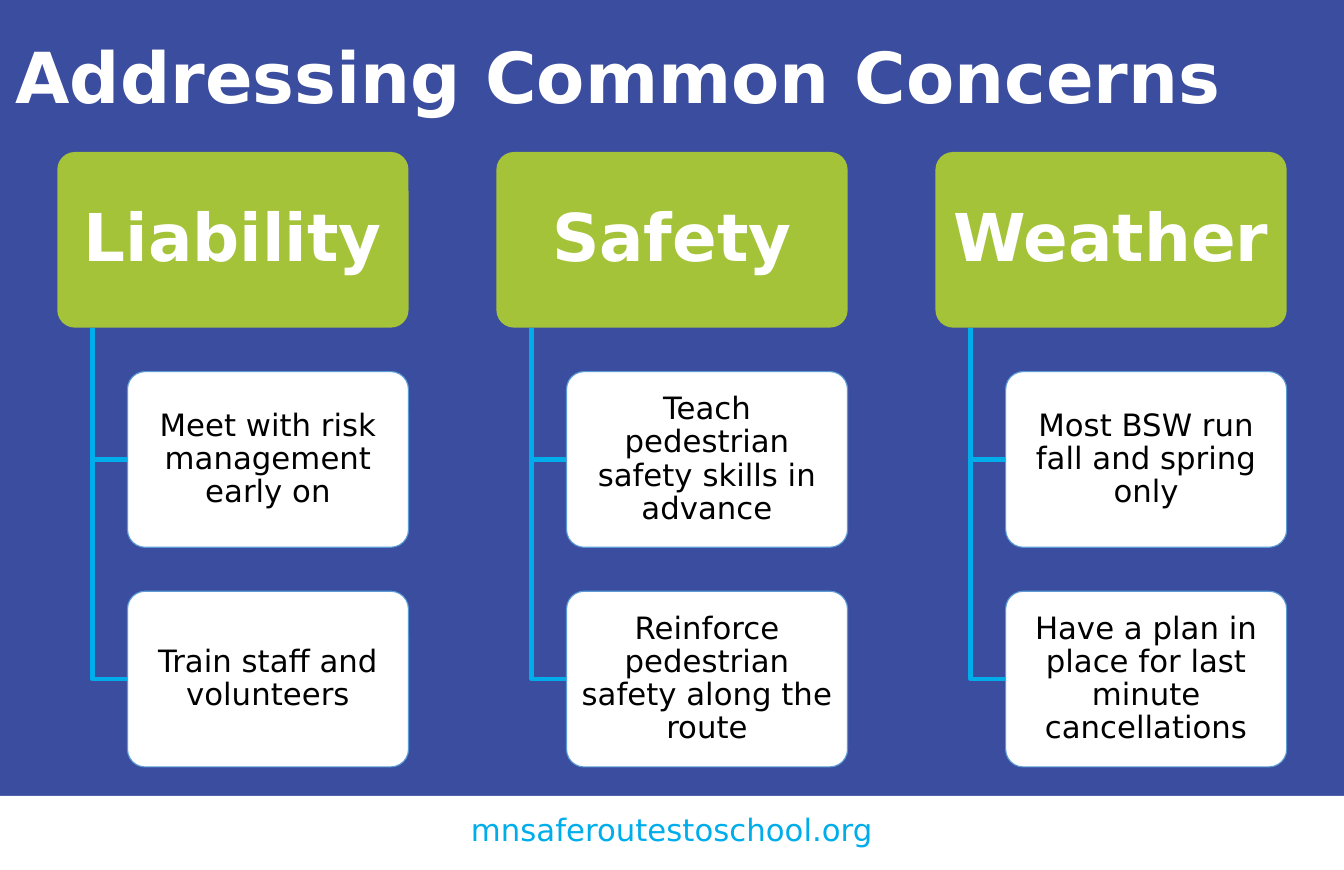
from pptx import Presentation
from pptx.dml.color import RGBColor
from pptx.enum.shapes import MSO_SHAPE
from pptx.enum.text import MSO_ANCHOR, MSO_AUTO_SIZE, PP_ALIGN
from pptx.util import Cm, Pt

RECT, ROUNDED = MSO_SHAPE.RECTANGLE, MSO_SHAPE.ROUNDED_RECTANGLE
LEFT, CENTER = PP_ALIGN.LEFT, PP_ALIGN.CENTER
MIDDLE, NO_FIT = MSO_ANCHOR.MIDDLE, MSO_AUTO_SIZE.NONE

FONT = "DejaVu Sans"
BLUE, GREEN, CYAN, EDGE = "3B4D9E", "A4C339", "00ADEB", "5B9BD5"
WHITE, BLACK = "FFFFFF", "000000"
WIDTH, HEIGHT = 21.59, 13.97

CONCERNS = [
    ("Liability", ["Meet with risk management early on", "Train staff and volunteers"]),
    ("Safety", ["Teach pedestrian safety skills in advance",
                "Reinforce pedestrian safety along the route"]),
    ("Weather", ["Most BSW run fall and spring only",
                 "Have a plan in place for last minute cancellations"]),
]


def paint(color_format, color):
    color_format.rgb = RGBColor.from_string(color)


def fill(target, color):
    target.fill.solid()
    paint(target.fill.fore_color, color)


def outline(sp, color, width):
    paint(sp.line.color, color)
    sp.line.width = Pt(width)


def write(sp, text, size, color, bold=False, align=CENTER, spacing=0.9, inset=0.25):
    tf = sp.text_frame
    tf.word_wrap = True
    tf.auto_size = NO_FIT
    tf.vertical_anchor = MIDDLE
    tf.margin_left = tf.margin_right = Cm(inset)
    tf.margin_top = tf.margin_bottom = Cm(0.13)
    p = tf.paragraphs[0]
    p.alignment = align
    p.line_spacing = spacing
    r = p.add_run()
    r.text = text
    r.font.name = FONT
    r.font.size = Pt(size)
    r.font.bold = bold
    paint(r.font.color, color)


def add_box(shapes, shape_type, x, y, w, h, color):
    sp = shapes.add_shape(shape_type, Cm(x), Cm(y), Cm(w), Cm(h))
    sp.shadow.inherit = False
    fill(sp, color)
    sp.line.fill.background()
    if shape_type == ROUNDED:
        sp.adjustments[0] = 0.1
    return sp


def add_branch(shapes, x, top, bottom, end):
    builder = shapes.build_freeform(Cm(x), Cm(top))
    builder.add_line_segments([(Cm(x), Cm(bottom)), (Cm(end), Cm(bottom))], close=False)
    sp = builder.convert_to_shape()
    sp.shadow.inherit = False
    sp.fill.background()
    outline(sp, CYAN, 2)


def add_title(s, x, y, w, h):
    sp = s.shapes.title
    sp.left, sp.top, sp.width, sp.height = Cm(x), Cm(y), Cm(w), Cm(h)
    write(sp, "Addressing Common Concerns", 32, WHITE, True, LEFT)


def add_concern(shapes, x, y, w, heading, items):
    h = w / 2
    indent = w / 5
    pitch = h * 1.25
    sp = add_box(shapes, ROUNDED, x, y, w, h, GREEN)
    write(sp, heading, 30, WHITE, True, inset=0.1)
    for row, item in enumerate(items, 1):
        top = y + row * pitch
        add_branch(shapes, x + indent / 2, y + h, top + h / 2, x + indent)
        sp = add_box(shapes, ROUNDED, x + indent, top, w - indent, h, WHITE)
        outline(sp, EDGE, 0.5)
        write(sp, item, 14, BLACK, inset=0.16)


def add_concerns(s, x, y, w):
    column = w / 3.5
    shapes = s.shapes.add_group_shape().shapes
    for i, (heading, items) in enumerate(CONCERNS):
        add_concern(shapes, x + i * column * 1.25, y, column, heading, items)


def add_footer(s, x, y, w, h):
    add_box(s.shapes, RECT, x, y, w, h, WHITE)
    link_w = 7.3
    sp = s.shapes.add_textbox(Cm(x + (w - link_w) / 2), Cm(y + 0.17), Cm(link_w), Cm(0.74))
    write(sp, "mnsaferoutestoschool.org", 14, CYAN, spacing=1.0)


def main():
    prs = Presentation()
    prs.slide_width, prs.slide_height = Cm(WIDTH), Cm(HEIGHT)
    s = prs.slides.add_slide(prs.slide_layouts[5])
    fill(s.background, BLUE)
    add_title(s, 0, 0, WIDTH, 2.59)
    add_footer(s, 0, 12.78, WIDTH, HEIGHT - 12.78)
    add_concerns(s, 0.92, 2.44, 19.75)
    prs.save("out.pptx")


if __name__ == "__main__":
    main()
